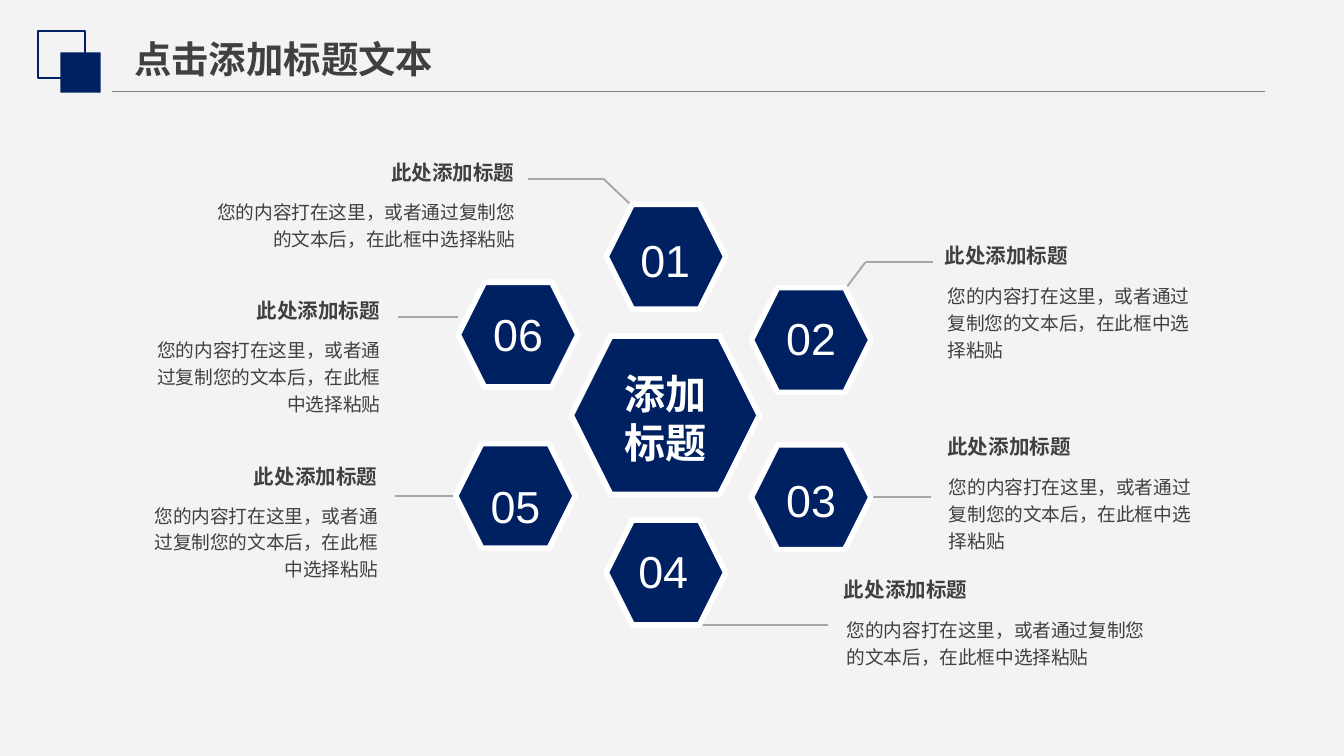
"""Build a slide with six numbered hexagons and captions around a central hexagon."""
from lxml.etree import SubElement
from pptx import Presentation
from pptx.dml.color import RGBColor
from pptx.enum.shapes import MSO_CONNECTOR as Connector, MSO_SHAPE as Shape
from pptx.enum.text import MSO_AUTO_SIZE as AutoSize, PP_ALIGN as Align
from pptx.oxml.ns import qn
from pptx.util import Inches, Pt

NAVY, WHITE, DARK, GREY = "002161", "FFFFFF", "404040", "A6A6A6"
CJK = "Noto Sans CJK SC"
TITLE = "点击添加标题文本"
CENTRE = "添加标题"
HEADING = "此处添加标题"
BODY = "您的内容打在这里，或者通过复制您的文本后，在此框中选择粘贴"

SLIDE_WIDTH = Inches(10)
SLIDE_HEIGHT = SLIDE_WIDTH * 9 // 16
HEX_SIZE = (0.89, 0.78)
HEADING_SIZE = (1.06, 0.25)
ITEMS = [
    {"number": "01", "hexagon": (4.51, 1.52), "label": (4.62, 1.6, 0.66, 0.54), "spacing": 1.2,
     "heading": (2.84, 1.16), "body": (1.46, 1.43, 2.44, 0.47), "align": Align.RIGHT,
     "leader": [(4.7, 1.53), (4.49, 1.33), (3.93, 1.33)]},
    {"number": "02", "hexagon": (5.59, 2.14), "label": (5.73, 2.26, 0.61, 0.5), "spacing": 1.0,
     "heading": (6.96, 1.78), "body": (6.98, 2.06, 1.99, 0.67), "align": Align.LEFT,
     "leader": [(6.29, 2.15), (6.44, 1.95), (6.94, 1.95)]},
    {"number": "03", "hexagon": (5.59, 3.31), "label": (5.69, 3.39, 0.69, 0.54), "spacing": 1.2,
     "heading": (6.98, 3.2), "body": (6.99, 3.48, 1.99, 0.67), "align": Align.LEFT,
     "leader": [(6.93, 3.7), (6.48, 3.7)]},
    {"number": "04", "hexagon": (4.51, 3.87), "label": (4.63, 4.0, 0.61, 0.5), "spacing": 1.0,
     "heading": (6.21, 4.26), "body": (6.23, 4.54, 2.4, 0.47), "align": Align.LEFT,
     "leader": [(5.21, 4.65), (6.16, 4.65)]},
    {"number": "05", "hexagon": (3.39, 3.3), "label": (3.53, 3.43, 0.61, 0.54), "spacing": 1.2,
     "heading": (1.82, 3.42), "body": (1.01, 3.69, 1.87, 0.67), "align": Align.RIGHT,
     "leader": [(3.39, 3.69), (2.94, 3.69)]},
    {"number": "06", "hexagon": (3.41, 2.1), "label": (3.55, 2.23, 0.61, 0.5), "spacing": 1.0,
     "heading": (1.84, 2.19), "body": (1.03, 2.46, 1.87, 0.67), "align": Align.RIGHT,
     "leader": [(3.41, 2.36), (2.96, 2.36)]},
]

FONTS = {
    "title": {"size": Pt(20), "name": CJK, "bold": True},
    "centre": {"size": Pt(22), "name": CJK, "bold": True},
    "number": {"size": Pt(24), "name": "Arial"},
    "heading": {"size": Pt(11), "name": CJK, "bold": True},
    "body": {"size": Pt(10), "name": CJK},
}
CAPTION_FRAME = {"margin_left": Inches(0.07), "margin_right": Inches(0.07),
                 "margin_top": Inches(0.03), "margin_bottom": Inches(0.03)}


def colour(hex_code):
    return RGBColor.from_string(hex_code)


def apply(target, values):
    for key, value in values.items():
        setattr(target, key, value)


def add_line(slide, start, end, line_colour, width):
    line = slide.shapes.add_connector(Connector.STRAIGHT, *map(Inches, start + end))
    line.line.color.rgb = colour(line_colour)
    line.line.width = Pt(width)
    SubElement(line._element.spPr, qn("a:effectLst"))


def add_outline(slide, kind, box, fill=None, line=None, width=1):
    outline = slide.shapes.add_shape(kind, *map(Inches, box))
    outline.shadow.inherit = False
    if fill:
        outline.fill.solid()
        outline.fill.fore_color.rgb = colour(fill)
    else:
        outline.fill.background()
    if line:
        outline.line.color.rgb = colour(line)
        outline.line.width = Pt(width)
    else:
        outline.line.fill.background()


def add_text(slide, box, text, style, text_colour, align, spacing=1.0, wrap=True, frame_format=None):
    frame = slide.shapes.add_textbox(*map(Inches, box)).text_frame
    apply(frame, {"word_wrap": wrap, "auto_size": AutoSize.SHAPE_TO_FIT_TEXT, **(frame_format or {})})
    paragraph = frame.paragraphs[0]
    apply(paragraph, {"alignment": align, "line_spacing": spacing})
    run = paragraph.add_run()
    run.text = text
    run.font.color.rgb = colour(text_colour)
    apply(run.font, FONTS[style])
    SubElement(run._r.get_or_add_rPr(), qn("a:ea"), typeface=FONTS[style]["name"])


def main():
    deck = Presentation()
    apply(deck, {"slide_width": SLIDE_WIDTH, "slide_height": SLIDE_HEIGHT})
    slide = deck.slides.add_slide(deck.slide_layouts[6])
    slide.background.fill.solid()
    slide.background.fill.fore_color.rgb = colour("F3F3F3")

    add_line(slide, (0.83, 0.68), (9.41, 0.68), "808080", 0.75)
    add_outline(slide, Shape.RECTANGLE, (0.28, 0.23, 0.35, 0.35), line=NAVY)
    add_outline(slide, Shape.RECTANGLE, (0.45, 0.39, 0.3, 0.3), fill=NAVY)
    add_text(slide, (0.9, 0.22, 2.45, 0.44), TITLE, "title", DARK, Align.LEFT, wrap=False)

    for item in ITEMS:
        for start, end in zip(item["leader"], item["leader"][1:]):
            add_line(slide, start, end, GREY, 1)
        add_outline(slide, Shape.HEXAGON, item["hexagon"] + HEX_SIZE, NAVY, WHITE, 3)
        add_text(slide, item["label"], item["number"], "number", WHITE, Align.CENTER, item["spacing"])
        add_text(slide, item["heading"] + HEADING_SIZE, HEADING, "heading", DARK, Align.RIGHT,
                 wrap=False, frame_format=CAPTION_FRAME)
        add_text(slide, item["body"], BODY, "body", DARK, item["align"], 1.2,
                 frame_format=CAPTION_FRAME)

    add_outline(slide, Shape.HEXAGON, (4.25, 2.5, 1.4, 1.18), NAVY, WHITE, 3)
    add_text(slide, (4.52, 2.69, 0.86, 0.84), CENTRE, "centre", WHITE, Align.CENTER)
    deck.save("out.pptx")


if __name__ == "__main__":
    main()
